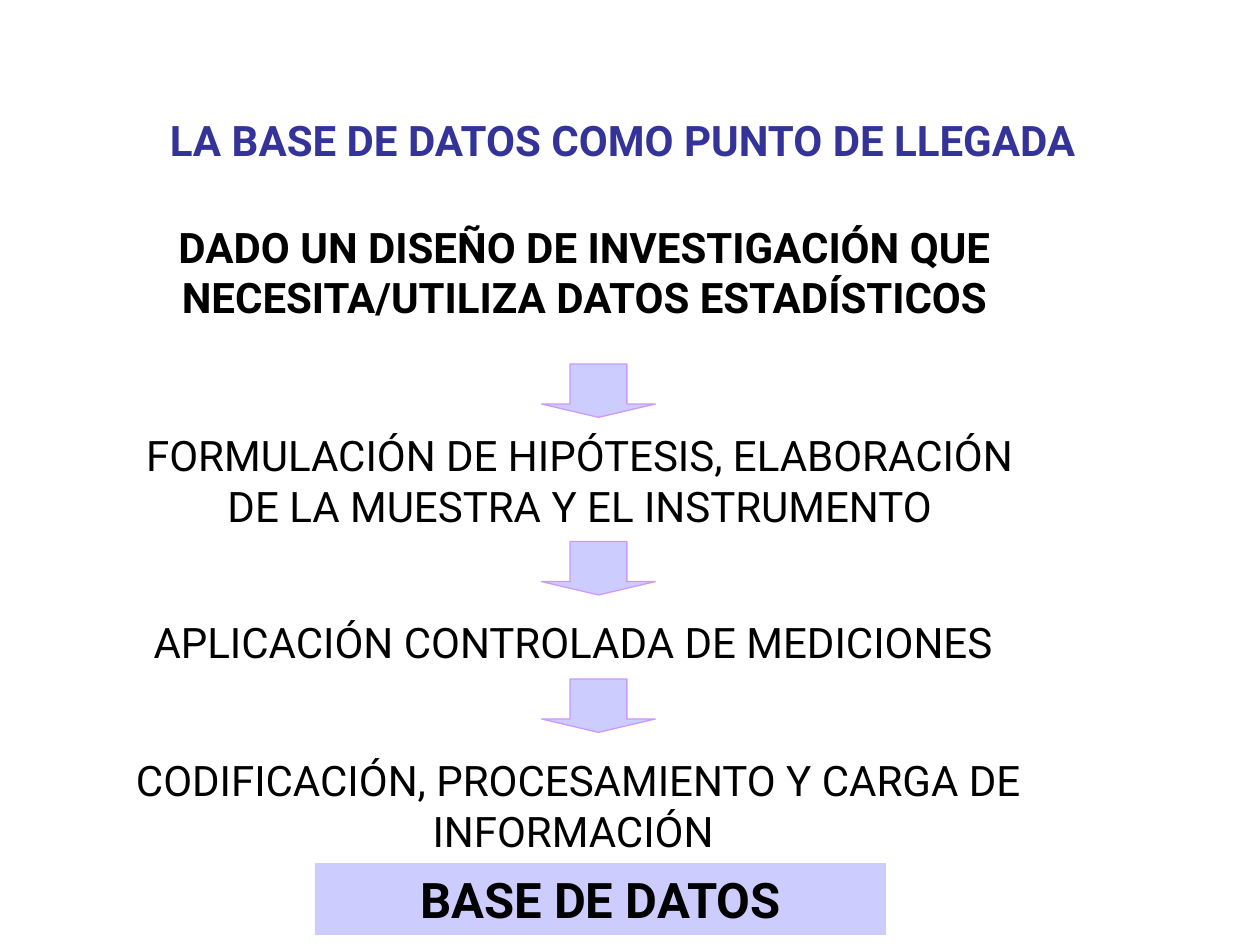
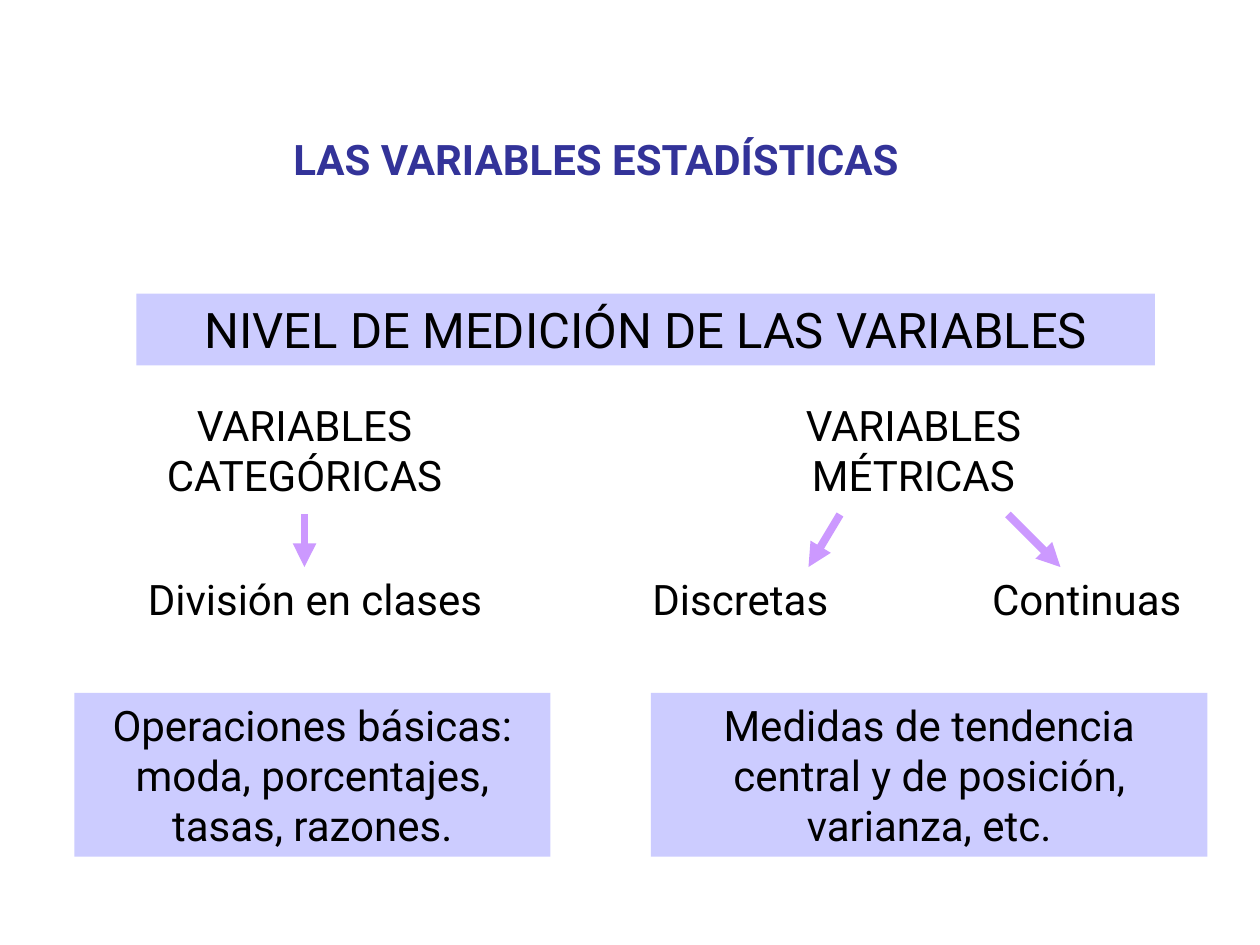
from lxml.etree import SubElement
from pptx import Presentation
from pptx.dml.color import RGBColor
from pptx.enum.shapes import MSO_CONNECTOR, MSO_SHAPE
from pptx.enum.text import MSO_ANCHOR, PP_ALIGN
from pptx.oxml.ns import qn
from pptx.util import Pt

# Shared style
FONT = "Roboto"
TITLE_BLUE = RGBColor(0x33, 0x33, 0x99)
BLACK = RGBColor(0x00, 0x00, 0x00)
BAND_LILAC = RGBColor(0xCC, 0xCC, 0xFF)
ARROW_VIOLET = RGBColor(0xCC, 0x99, 0xFF)
BODY_SIZE, BAND_SIZE = 24, 28
ONE_LINE, TWO_LINES, THREE_LINES, BAND_HEIGHT = 36, 65, 93.6, 41

# Slide 1: a chain of steps; boxes are (left, top, width, height) in points
ARRIVAL_TITLE = ("LA BASE DE DATOS COMO PUNTO DE LLEGADA", (90, 62, 582.5, ONE_LINE))
PREMISE = ("DADO UN DISEÑO DE INVESTIGACIÓN QUE\vNECESITA/UTILIZA DATOS ESTADÍSTICOS",
           (28, 129.6, 612, 51))
STEPS = [
    ("FORMULACIÓN DE HIPÓTESIS, ELABORACIÓN DE LA MUESTRA Y EL INSTRUMENTO",
     (70.5, 242, 521.5, TWO_LINES)),
    ("APLICACIÓN CONTROLADA DE MEDICIONES", (48, 348.5, 559, ONE_LINE)),
    ("CODIFICACIÓN, PROCESAMIENTO Y CARGA DE INFORMACIÓN ", (42.5, 427.7, 576, TWO_LINES)),
]
RESULT = ("BASE DE DATOS", (180, 493.3, 326.2, BAND_HEIGHT))
STEP_ARROW_LEFT, STEP_ARROW_WIDTH, STEP_ARROW_HEIGHT = 309.5, 65, 30.5
STEP_ARROW_TOPS = [208, 309.5, 388]

# Slide 2: a tree of variable types
VARIABLES_TITLE = ("LAS VARIABLES ESTADÍSTICAS", (160.5, 72.8, 392.5, ONE_LINE))
LEVEL = ("NIVEL DE MEDICIÓN DE LAS VARIABLES", (78, 167.8, 582, BAND_HEIGHT))
TYPES_TOP, SUBTYPES_TOP, MEASURES_TOP = 224.6, 324, 396
TYPES = [("VARIABLES CATEGÓRICAS", 60, 228), ("VARIABLES MÉTRICAS", 406, 232)]
SUBTYPES = [("División en clases", 72, 216), ("Discretas ", 342, 168), ("Continuas", 522, 198)]
MEASURES = [
    ("Operaciones básicas: moda, porcentajes, tasas, razones.", 42.5, 272),
    ("Medidas de tendencia central y de posición, varianza, etc.", 372, 318),
]
BRANCH_TOP, BRANCH_BOTTOM = 294, 324
BRANCHES = [(174, 174), (480, 462), (576, 606)]  # x at the top, x at the bottom


def write(shape, text, size=BODY_SIZE, bold=False, color=BLACK,
          align=PP_ALIGN.CENTER, anchor=MSO_ANCHOR.TOP):
    frame = shape.text_frame
    frame.word_wrap = True
    frame.vertical_anchor = anchor
    paragraph = frame.paragraphs[0]
    paragraph.text = text
    paragraph.alignment = align
    font = paragraph.font
    font.name, font.size, font.bold = FONT, Pt(size), bold
    font.color.rgb = color


def add_label(slide, text, box, **style):
    write(slide.shapes.add_textbox(*map(Pt, box)), text, **style)


def add_title(slide, text, box):
    add_label(slide, text, box, bold=True, color=TITLE_BLUE, align=PP_ALIGN.LEFT)


def add_filled(slide, kind, box):
    shape = slide.shapes.add_shape(kind, *map(Pt, box))
    shape.shadow.inherit = False
    shape.fill.solid()
    shape.fill.fore_color.rgb = BAND_LILAC
    return shape


def add_band(slide, text, box, **style):
    band = add_filled(slide, MSO_SHAPE.RECTANGLE, box)
    band.line.fill.background()
    write(band, text, **style)


def add_step_arrow(slide, top):
    box = (STEP_ARROW_LEFT, top, STEP_ARROW_WIDTH, STEP_ARROW_HEIGHT)
    arrow = add_filled(slide, MSO_SHAPE.DOWN_ARROW, box)
    arrow.adjustments[0], arrow.adjustments[1] = 0.5, 0.25
    arrow.line.color.rgb = ARROW_VIOLET
    arrow.line.width = Pt(0.75)


def add_branch(slide, start_x, end_x):
    ends = (start_x, BRANCH_TOP, end_x, BRANCH_BOTTOM)
    branch = slide.shapes.add_connector(MSO_CONNECTOR.STRAIGHT, *map(Pt, ends))
    branch.line.color.rgb = ARROW_VIOLET
    branch.line.width = Pt(4.5)
    # Arrowhead, and no theme shadow
    SubElement(branch.line._get_or_add_ln(), qn("a:tailEnd"), type="triangle")
    SubElement(branch._element.spPr, qn("a:effectLst"))


def build_arrival(slide):
    add_title(slide, *ARRIVAL_TITLE)
    add_label(slide, *PREMISE, bold=True, anchor=MSO_ANCHOR.MIDDLE)
    for text, box in STEPS:
        add_label(slide, text, box)
    for top in STEP_ARROW_TOPS:
        add_step_arrow(slide, top)
    add_band(slide, *RESULT, size=BAND_SIZE, bold=True)


def build_variables(slide):
    add_title(slide, *VARIABLES_TITLE)
    add_band(slide, *LEVEL, size=BAND_SIZE)
    rows = [
        (add_label, TYPES, TYPES_TOP, TWO_LINES),
        (add_label, SUBTYPES, SUBTYPES_TOP, ONE_LINE),
        (add_band, MEASURES, MEASURES_TOP, THREE_LINES),
    ]
    for add_part, parts, top, height in rows:
        for text, left, width in parts:
            add_part(slide, text, (left, top, width, height))
    for start_x, end_x in BRANCHES:
        add_branch(slide, start_x, end_x)


def main():
    presentation = Presentation()
    presentation.slide_width, presentation.slide_height = Pt(720), Pt(540)
    blank = presentation.slide_layouts[6]
    for build in (build_arrival, build_variables):
        build(presentation.slides.add_slide(blank))
    presentation.save("out.pptx")


if __name__ == "__main__":
    main()
